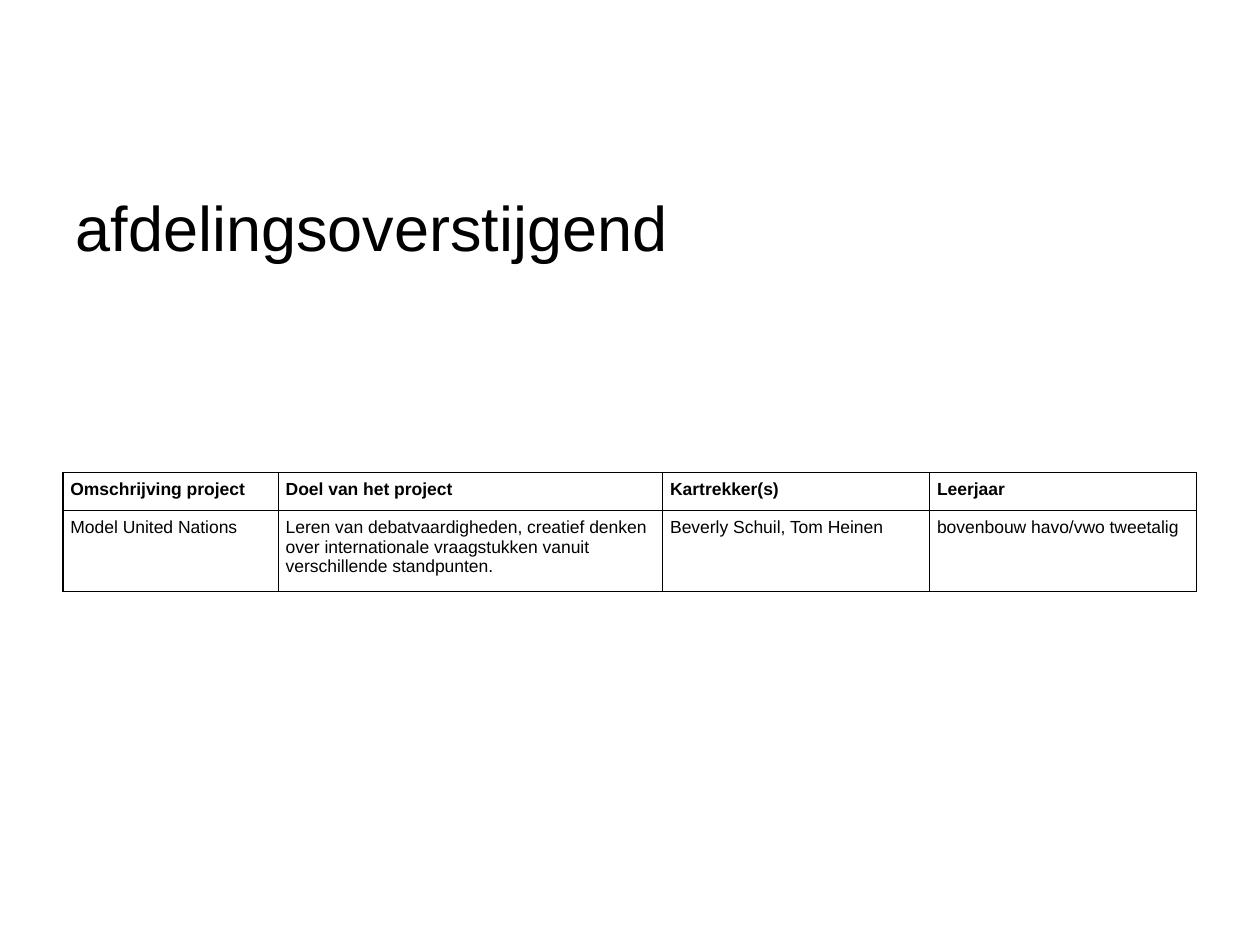
from dataclasses import dataclass

from lxml.etree import SubElement
from pptx import Presentation
from pptx.dml.color import RGBColor
from pptx.enum.text import MSO_ANCHOR, MSO_AUTO_SIZE, PP_ALIGN
from pptx.oxml.ns import qn
from pptx.slide import Slide
from pptx.table import _Cell
from pptx.text.text import TextFrame
from pptx.util import Cm, Pt


@dataclass(frozen=True)
class Theme:
    font: str = "Arial"
    ink: str = "000000"
    title_size: int = 36
    table_size: int = 10
    border_width: int = 1


@dataclass(frozen=True)
class ProjectColumn:
    heading: str
    detail: str
    width: float


THEME = Theme()
COLUMNS = [
    ProjectColumn("Omschrijving project", "Model United Nations", 4.34),
    ProjectColumn(
        "Doel van het project",
        "Leren van debatvaardigheden, creatief denken over internationale "
        "vraagstukken vanuit verschillende standpunten.",
        7.75,
    ),
    ProjectColumn("Kartrekker(s)", "Beverly Schuil, Tom Heinen", 5.38),
    ProjectColumn("Leerjaar", "bovenbouw havo/vwo tweetalig", 5.38),
]
ROW_HEIGHTS = [0.76, 1.63]
LEFT = 1.27
TABLE_TOP = 9.53
CELL_INSET = 0.15


def format_text(text_frame: TextFrame, size: int, bold: bool) -> None:
    for paragraph in text_frame.paragraphs:
        paragraph.alignment = PP_ALIGN.LEFT
        for run in paragraph.runs:
            run.font.name = THEME.font
            run.font.size = Pt(size)
            run.font.bold = bold
            run.font.color.rgb = RGBColor.from_string(THEME.ink)


def add_borders(cell: _Cell) -> None:
    properties = cell._tc.get_or_add_tcPr()
    for side in ("lnL", "lnR", "lnT", "lnB"):
        line = SubElement(properties, qn(f"a:{side}"), w=str(Pt(THEME.border_width)))
        fill = SubElement(line, qn("a:solidFill"))
        SubElement(fill, qn("a:srgbClr"), val=THEME.ink)


def fill_cell(cell: _Cell, text: str, bold: bool) -> None:
    cell.text_frame.text = text
    format_text(cell.text_frame, THEME.table_size, bold)
    cell.margin_left = cell.margin_right = Cm(CELL_INSET)
    cell.margin_top = cell.margin_bottom = Cm(CELL_INSET)
    cell.vertical_anchor = MSO_ANCHOR.TOP
    add_borders(cell)
    cell.fill.background()


def place_title(slide: Slide, text: str) -> None:
    title = slide.shapes.title
    title.left, title.top = Cm(LEFT), Cm(2.13)
    title.width, title.height = Cm(20.04), Cm(3.33)
    text_frame = title.text_frame
    text_frame.text = text
    text_frame.word_wrap = True
    text_frame.auto_size = MSO_AUTO_SIZE.NONE
    text_frame.vertical_anchor = MSO_ANCHOR.BOTTOM
    format_text(text_frame, THEME.title_size, False)


def add_project_table(slide: Slide) -> None:
    table = slide.shapes.add_table(
        len(ROW_HEIGHTS),
        len(COLUMNS),
        Cm(LEFT),
        Cm(TABLE_TOP),
        Cm(sum(column.width for column in COLUMNS)),
        Cm(sum(ROW_HEIGHTS)),
    ).table
    table.horz_banding = False
    table.first_row = False
    for row, height in zip(table.rows, ROW_HEIGHTS):
        row.height = Cm(height)
    for index, column in enumerate(COLUMNS):
        table.columns[index].width = Cm(column.width)
        fill_cell(table.cell(0, index), column.heading, True)
        fill_cell(table.cell(1, index), column.detail, False)


def main() -> None:
    presentation = Presentation()
    presentation.slide_width, presentation.slide_height = Cm(25.4), Cm(19.05)
    slide = presentation.slides.add_slide(presentation.slide_layouts[5])
    place_title(slide, "afdelingsoverstijgend")
    add_project_table(slide)
    presentation.save("out.pptx")


if __name__ == "__main__":
    main()
